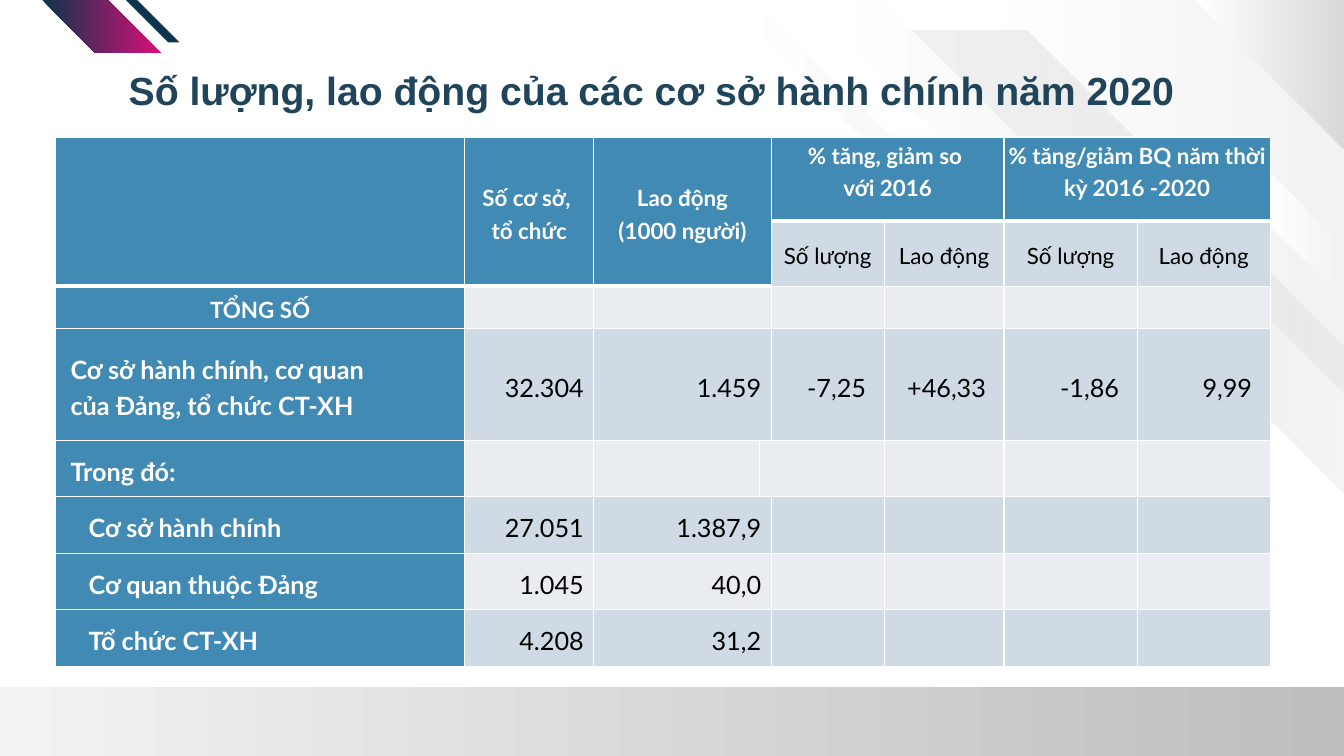
from lxml import etree
from pptx import Presentation
from pptx.dml.color import RGBColor
from pptx.enum.shapes import MSO_SHAPE
from pptx.enum.text import MSO_ANCHOR, MSO_AUTO_SIZE, PP_ALIGN
from pptx.oxml import parse_xml
from pptx.oxml.ns import nsdecls, qn
from pptx.util import Inches, Pt

BLUE, PALE, PALER, WHITE, BLACK = "418AB3", "CFDAE5", "E9EDF2", "FFFFFF", "000000"


def rgb(value):
    return RGBColor.from_string(value)


def paint(shape, colors):
    """Fill a borderless shape with one colour or a left-to-right gradient."""
    shape.shadow.inherit = False
    shape.line.fill.background()
    if len(colors) == 1:
        shape.fill.solid()
        shape.fill.fore_color.rgb = rgb(colors[0])
        return
    shape.fill.gradient()
    shape.fill.gradient_angle = 0
    for stop, color in zip(shape.fill.gradient_stops, colors):
        stop.color.rgb = rgb(color)


deck = Presentation()
deck.slide_width, deck.slide_height = Inches(13.33), Inches(7.5)
page = deck.slides.add_slide(deck.slide_layouts[5])

# Bottom band
band = page.shapes.add_shape(MSO_SHAPE.RECTANGLE, 0, Inches(6.82), Inches(13.33), Inches(0.68))
paint(band, ["F2F2F2", "BFBEBE"])

# Diagonal stripes: corner points, colours, opacity of the last colour
stripes = [
    ([(13.33, 0), (9.43, 0), (13.33, 3.9)], [WHITE, "F2F2F2"], 100),
    ([(13.33, 3.44), (10.19, 0.3), (8.71, 0.3), (13.33, 4.91)], ["F2F2F2", "D9D9D9"], 26),
    ([(13.33, 2.45), (12.49, 1.61), (12.49, 2.14), (13.33, 2.98)], [WHITE, "F2F2F2"], 100),
    ([(11.57, 2.82), (8.74, 0), (7.97, 0), (10.8, 2.82)], [WHITE, "F2F2F2"], 100),
    ([(13.33, 0), (11.85, 0), (13.33, 1.48)], [WHITE, "D9D9D9"], 100),
    ([(7.48, 0), (10.01, 2.53), (10.01, 2.82), (7.18, 0)], [WHITE, "F2F2F2"], 100),
    ([(0.42, 0), (0.95, 0.53), (1.6, 0.53), (1.07, 0)], ["0C344C", "D80F79"], 100),
    ([(1.25, 0), (1.67, 0.42), (1.78, 0.42), (1.36, 0)], ["0C344C"], 100),
]
for points, colors, opacity in stripes:
    corners = [(Inches(x), Inches(y)) for x, y in points]
    builder = page.shapes.build_freeform(*corners[0])
    builder.add_line_segments(corners[1:], close=True)
    stripe = builder.convert_to_shape()
    paint(stripe, colors)
    if opacity < 100:
        last_color = list(stripe.element.iter(qn("a:srgbClr")))[-1]
        etree.SubElement(last_color, qn("a:alpha")).set("val", str(opacity * 1000))

# Title, brought in front of the stripes
title = page.shapes.title
title.element.getparent().append(title.element)
title.left, title.top, title.width, title.height = (Inches(n) for n in (0.9, 0.66, 11.12, 0.47))
frame = title.text_frame
frame.text = "Số lượng, lao động của các cơ sở hành chính năm 2020"
frame.word_wrap, frame.auto_size = True, MSO_AUTO_SIZE.NONE
frame.vertical_anchor = MSO_ANCHOR.MIDDLE
frame.margin_left = frame.margin_right = frame.margin_top = frame.margin_bottom = 0
frame.paragraphs[0].alignment = PP_ALIGN.CENTER
font = frame.paragraphs[0].runs[0].font
font.name, font.size, font.bold, font.color.rgb = "Arial", Pt(28), True, rgb("20455A")

# Table grid
column_widths = [4.06, 1.28, 1.64, 0.12, 1.12, 1.19, 1.32, 1.32]
row_heights = [0.83, 0.65, 0.42, 1.11, 0.56, 0.56, 0.56, 0.56]
table = page.shapes.add_table(
    len(row_heights), len(column_widths), Inches(0.55), Inches(1.36),
    Inches(sum(column_widths)), Inches(sum(row_heights))).table
table.first_row = table.horz_banding = False
for column, width in zip(table.columns, column_widths):
    column.width = Inches(width)
for row, height in zip(table.rows, row_heights):
    row.height = Inches(height)

# Cell fills and borders
for r in range(len(row_heights)):
    for c in range(len(column_widths)):
        cell = table.cell(r, c)
        header = r == 0 or (r == 1 and c < 4)
        cell.fill.solid()
        cell.fill.fore_color.rgb = rgb(BLUE if header or c == 0 else PALE if r % 2 else PALER)
        properties = cell._tc.get_or_add_tcPr()
        for place, side in enumerate(("lnL", "lnR", "lnT", "lnB")):
            below_header = (side == "lnB" and header) or (
                side == "lnT" and ((r == 1 and c > 3) or (r == 2 and c < 4)))
            properties.insert(place, parse_xml(
                f'<a:{side} {nsdecls("a")} w="{Pt(3 if below_header else 1)}"><a:solidFill>'
                f'<a:srgbClr val="{WHITE}"/></a:solidFill></a:{side}>'))

# Merged cells
merges = [((0, 0), (1, 0)), ((0, 1), (1, 1)), ((0, 2), (1, 3)),
          ((0, 4), (0, 5)), ((0, 6), (0, 7)), ((4, 3), (4, 4))]
merges += [((r, 2), (r, 3)) for r in (2, 3, 5, 6, 7)]
for first, last in merges:
    table.cell(*first).merge(table.cell(*last))

# Cell wording by row and column
wording = {
    0: {1: "Số cơ sở, \vtổ chức", 2: "Lao động\v(1000 người)",
        4: "% tăng, giảm so \vvới 2016", 6: "% tăng/giảm BQ năm thời kỳ 2016 -2020"},
    1: {4: "Số lượng", 5: "Lao động", 6: "Số lượng", 7: "Lao động"},
    2: {0: "TỔNG SỐ"},
    3: {0: "Cơ sở hành chính, cơ quan \vcủa Đảng, tổ chức CT-XH", 1: "32.304", 2: "1.459",
        4: "-7,25", 5: "+46,33", 6: "-1,86", 7: "9,99"},
    4: {0: "Trong đó:"},
    5: {0: "Cơ sở hành chính", 1: "27.051", 2: "1.387,9"},
    6: {0: "Cơ quan thuộc Đảng", 1: "1.045", 2: "40,0"},
    7: {0: "Tổ chức CT-XH", 1: "4.208", 2: "31,2"},
}
for r, entries in wording.items():
    for c, text in entries.items():
        cell = table.cell(r, c)
        centred = r < 3
        label = c == 0 and not centred
        number = c > 0 and not centred
        cell.vertical_anchor = MSO_ANCHOR.TOP if r == 0 and c > 3 else MSO_ANCHOR.MIDDLE
        cell.margin_top = cell.margin_bottom = 0
        cell.margin_left = Inches((0.33 if r > 4 else 0.15) if label else 0.02)
        cell.margin_right = Inches((0.18 if c > 3 else 0.1) if number else 0.02)
        para = cell.text_frame.paragraphs[0]
        para.text = text
        para.alignment = (PP_ALIGN.CENTER if centred else
                          PP_ALIGN.LEFT if label else PP_ALIGN.RIGHT)
        para.line_spacing = 1.2
        para.space_before = Pt(12 if r == 2 else 6)
        para.space_after = Pt(3 if r == 4 else 0)
        strong = r == 0 or c == 0
        for span in para.runs:
            span.font.name, span.font.size = "Lato", Pt(16 if centred else 18)
            span.font.bold = strong
            span.font.color.rgb = rgb(WHITE if strong else BLACK)

deck.save("out.pptx")
